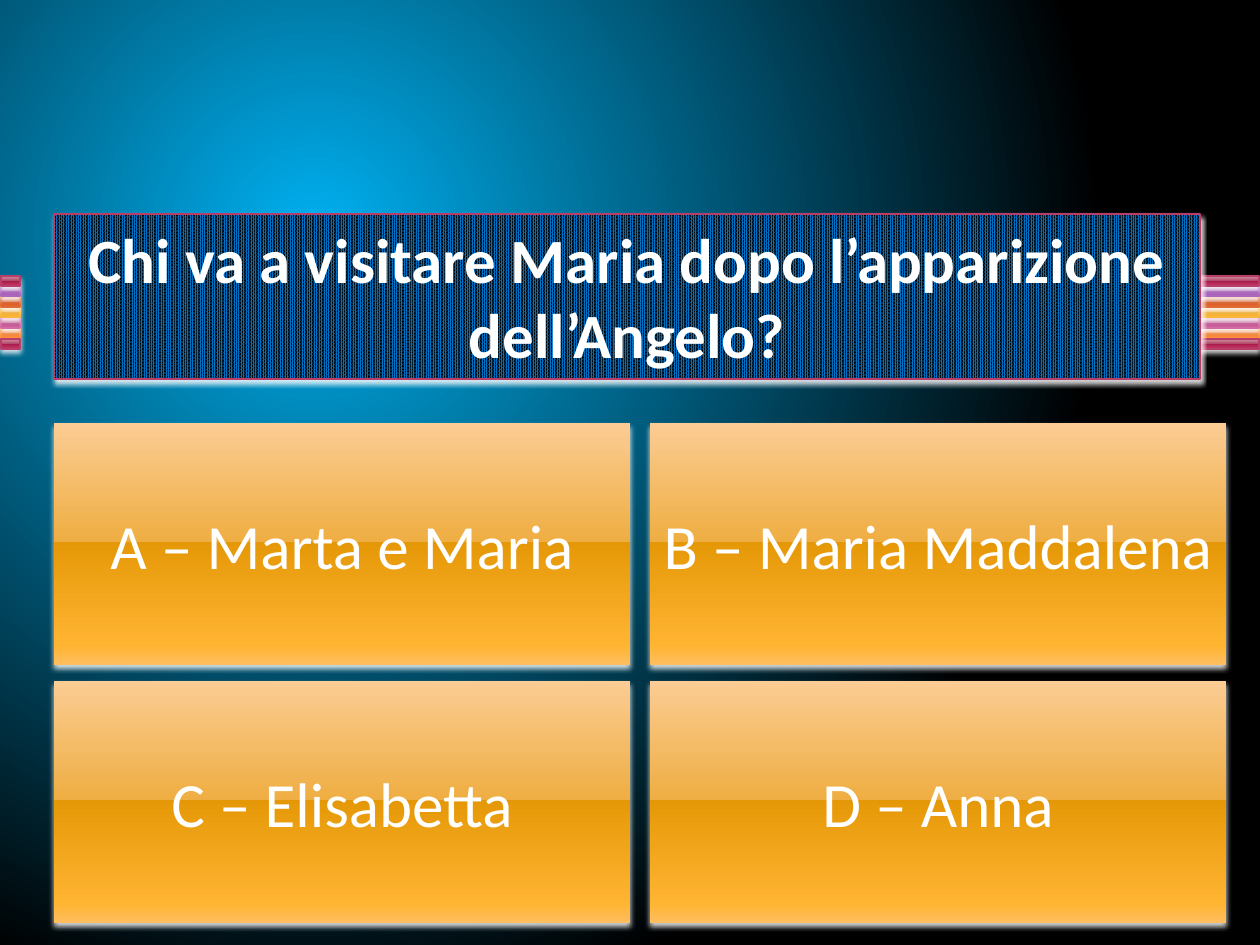
from pptx import Presentation
from pptx.dml.color import RGBColor as Rgb
from pptx.enum.dml import MSO_PATTERN as Pattern
from pptx.enum.shapes import MSO_SHAPE as Shape
from pptx.enum.text import MSO_ANCHOR as Anchor, MSO_AUTO_SIZE as AutoSize, PP_ALIGN as Align
from pptx.oxml import parse_xml
from pptx.oxml.ns import nsdecls, qn
from pptx.util import Pt

PX = 914400 // 126

THEME = {
    "font": "Calibri",
    "size": 36,
    "text": "FFFFFF",
    "shadow": "FFFFFF",
    "pattern": ("0070C0", "000000"),
    "background": ("00B0F0", "000000"),
    "line_width": 0.9,
    "gloss_stops": (0, 49, 49, 92, 100),
    "gloss": {
        "crimson": ("CE94A2", "B34869", "A61749", "C13764", "CA5D7C"),
        "purple": ("C6A2D0", "A666B4", "8F3EA1", "AD5DBF", "BA76CA"),
        "rust": ("E7A493", "D66B42", "CC4809", "E9642C", "F07B55"),
        "amber": ("FBCC93", "EFAE43", "E59807", "FFB432", "FFBE5F"),
        "pink": ("DDA4C1", "C66B9D", "B34181", "D361A0", "DC79AE"),
        "orange": ("FBB494", "F08745", "E5670B", "FF8736", "FF9961"),
    },
    "line": {
        "crimson": "B83D68", "purple": "AC66BB", "rust": "DE6C36",
        "amber": "F9B639", "pink": "CF6DA4", "orange": "FA8D3D",
    },
}
SHADOW = (
    f'<a:effectLst {nsdecls("a")}><a:outerShdw blurRad="39370" dist="25400" dir="5400000" '
    f'rotWithShape="0"><a:srgbClr val="{THEME["shadow"]}"><a:alpha val="83000"/></a:srgbClr>'
    '</a:outerShdw></a:effectLst>'
)
DOWNWARD = '<a:lin ang="5400000" scaled="0"/>'
RADIAL = '<a:path path="circle"><a:fillToRect l="50000" t="50000" r="100000" b="100000"/></a:path>'


def gradient(stops, colors, direction):
    """Return a gradient fill element; stops are percentages."""
    marks = "".join(
        f'<a:gs pos="{stop * 1000}"><a:srgbClr val="{color}"/></a:gs>'
        for stop, color in zip(stops, colors)
    )
    return parse_xml(
        f'<a:gradFill {nsdecls("a")} rotWithShape="1"><a:gsLst>{marks}</a:gsLst>{direction}</a:gradFill>'
    )


def glossy_box(shapes, left, top, width, height, tone, outlined):
    box = shapes.add_shape(Shape.RECTANGLE, left * PX, top * PX, width * PX, height * PX)
    properties = box.element.spPr
    properties.append(gradient(THEME["gloss_stops"], THEME["gloss"][tone], DOWNWARD))
    if outlined:
        box.line.color.rgb = Rgb.from_string(THEME["line"][tone])
        box.line.width = Pt(THEME["line_width"])
    else:
        box.line.fill.background()
    properties.append(parse_xml(SHADOW))
    return box


deck = Presentation()
deck.slide_width, deck.slide_height = 1260 * PX, 945 * PX
page = deck.slides.add_slide(deck.slide_layouts[5])

page.background.fill.solid()
background = page.element.find(".//" + qn("p:bgPr"))
background.replace(background[0], gradient((0, 100), THEME["background"], RADIAL))

# Striped bands on both sides of the question
BAND_TONES = ("crimson", "purple", "rust", "amber", "pink", "orange", "crimson")
for left, width in ((1, 19), (1183, 76)):
    band = page.shapes.add_group_shape()
    for row in (5, 4, 3, 2, 1, 0, 6):
        glossy_box(band.shapes, left, 276 + row * 21 // 2, width, 10, BAND_TONES[row], True)

# Answers in a two by two grid
ANSWERS = ("A – Marta e Maria", "B – Maria Maddalena", "C – Elisabetta", "D – Anna")
text_boxes = []
for index, answer in enumerate(ANSWERS):
    row, column = divmod(index, 2)
    box = glossy_box(page.shapes, 54 + column * 596, 423 + row * 258, 576, 242, "amber", False)
    text_boxes.append((box, answer, False, Anchor.MIDDLE, AutoSize.NONE))

# Question, in front of the bands
question = page.shapes.title
page.shapes.element.append(question.element)
place = {"left": 54, "top": 214, "width": 1146, "height": 165}
for name, length in place.items():
    setattr(question, name, length * PX)
question.fill.patterned()
question.fill.pattern = Pattern.PERCENT_90
question.fill.fore_color.rgb, question.fill.back_color.rgb = map(Rgb.from_string, THEME["pattern"])
question.line.color.rgb = Rgb.from_string(THEME["line"]["crimson"])
question.line.width = Pt(THEME["line_width"])
question.element.spPr.append(parse_xml(SHADOW))
text_boxes.append((question, "Chi va a visitare Maria dopo l’apparizione dell’Angelo?",
                   True, Anchor.TOP, AutoSize.SHAPE_TO_FIT_TEXT))

for box, words, bold, anchor, auto_size in text_boxes:
    frame = box.text_frame
    frame_format = {"word_wrap": True, "vertical_anchor": anchor, "auto_size": auto_size}
    for name, value in frame_format.items():
        setattr(frame, name, value)
    para = frame.paragraphs[0]
    para.alignment = Align.CENTER
    span = para.add_run()
    span.text = words
    font_format = {"name": THEME["font"], "size": Pt(THEME["size"]), "bold": bold}
    for name, value in font_format.items():
        setattr(span.font, name, value)
    span.font.color.rgb = Rgb.from_string(THEME["text"])

deck.save("out.pptx")
